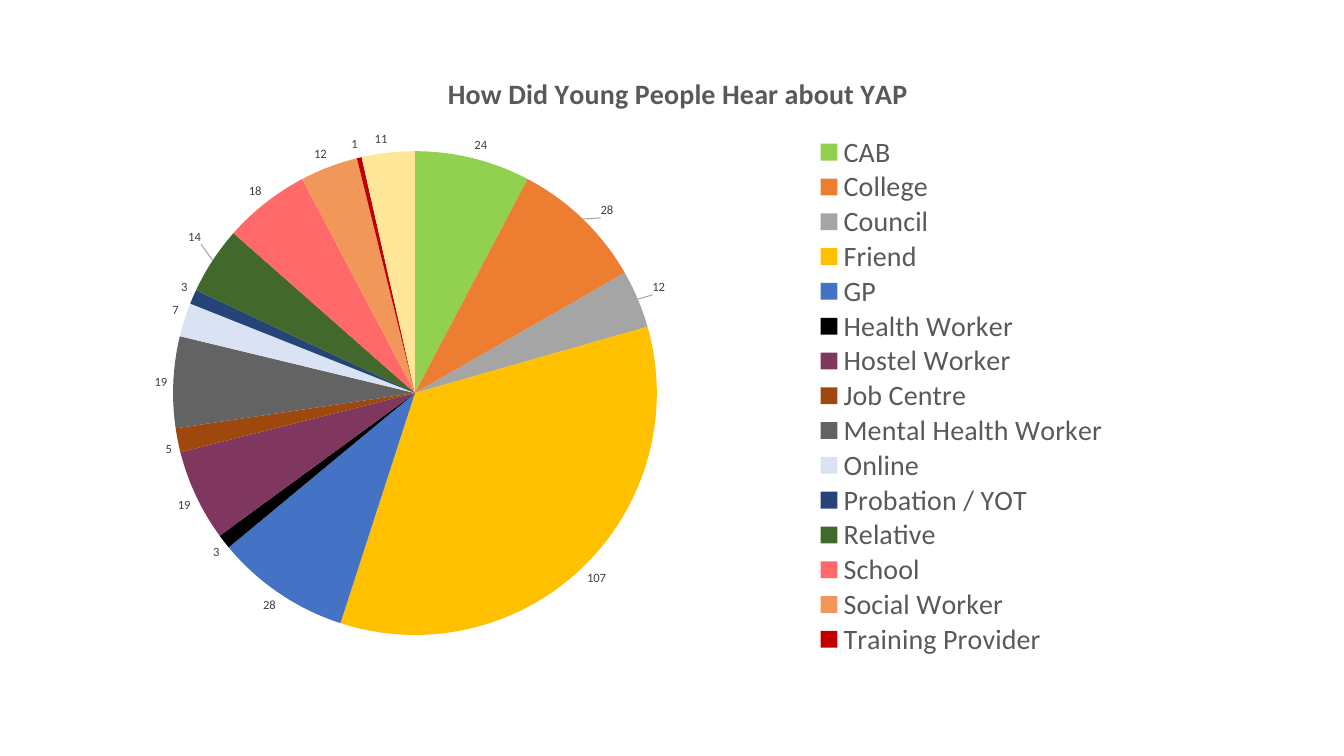
from dataclasses import dataclass

from lxml import etree
from pptx import Presentation
from pptx import util as u
from pptx.chart.data import CategoryChartData
from pptx.dml.color import RGBColor
from pptx.enum import chart as charts
from pptx.oxml.ns import qn


@dataclass(frozen=True)
class Theme:
    font: str = "Calibri"
    text: str = "595959"
    label_text: str = "404040"
    leader_line: str = "A6A6A6"
    title_size: int = 20
    legend_size: int = 20
    label_size: int = 9


# Referral source, number of young people, slice colour
SOURCES = [
    ("CAB", 24, "92D050"),
    ("College", 28, "ED7D31"),
    ("Council", 12, "A5A5A5"),
    ("Friend", 107, "FFC000"),
    ("GP", 28, "4472C4"),
    ("Health Worker", 3, "000000"),
    ("Hostel Worker", 19, "7F3760"),
    ("Job Centre", 5, "9E480E"),
    ("Mental Health Worker", 19, "636363"),
    ("Online", 7, "DAE3F3"),
    ("Probation / YOT", 3, "264478"),
    ("Relative", 14, "43682B"),
    ("School", 18, "FF6969"),
    ("Social Worker", 12, "F1975A"),
    ("Training Provider", 1, "C00000"),
    ("Other", 11, "FFE699"),
]
# Shifts of single labels, as percentages of the chart size
LABEL_SHIFTS = {"College": (1.2, 0.5), "Council": (0.8, -0.3), "Relative": (-0.6, -2)}


def add_element(parent, tag, **attributes):
    return etree.SubElement(parent, qn(tag), attributes)


def set_layout(parent, index, *, target=None, edge=True, **percentages):
    """Give a chart part a manual layout, placed at index among its children."""
    for old in parent.findall(qn("c:layout")):
        parent.remove(old)
    layout = etree.Element(qn("c:layout"))
    manual = add_element(layout, "c:manualLayout")
    if target:
        add_element(manual, "c:layoutTarget", val=target)
    if edge:
        add_element(manual, "c:xMode", val="edge")
        add_element(manual, "c:yMode", val="edge")
    for name, percentage in percentages.items():
        add_element(manual, f"c:{name}", val=f"{percentage / 100:.4f}")
    parent.insert(index, layout)


class SlideBuilder:
    def __init__(self, slide, theme):
        self.slide = slide
        self.theme = theme

    def style_font(self, font, size, color, bold=False):
        font.name = self.theme.font
        font.size = u.Pt(size)
        font.bold = bold
        font.color.rgb = RGBColor.from_string(color)

    def add_pie(self, sources, left, top, width, height):
        names, values, colors = zip(*sources)
        data = CategoryChartData()
        data.categories = names
        data.add_series("Series 1", values)
        chart = self.slide.shapes.add_chart(
            charts.XL_CHART_TYPE.PIE, left, top, width, height, data).chart
        series = chart.plots[0].series[0]
        for index, color in enumerate(colors):
            fill = series.points[index].format.fill
            fill.solid()
            fill.fore_color.rgb = RGBColor.from_string(color)
        set_layout(chart._chartSpace.chart.plotArea, 0, target="inner",
                   x=5.4, y=12.4, w=42.7, h=81.5)
        return chart

    def add_chart_title(self, chart, title):
        chart.has_title = True
        frame = chart.chart_title.text_frame
        frame.text = title
        self.style_font(frame.paragraphs[0].font, self.theme.title_size,
                        self.theme.text, bold=True)
        set_layout(chart.chart_title._element, 1, x=29.2, y=2.3)

    def add_legend(self, chart):
        chart.has_legend = True
        legend = chart.legend
        legend.position = charts.XL_LEGEND_POSITION.BOTTOM
        legend.include_in_layout = False
        self.style_font(legend.font, self.theme.legend_size, self.theme.text)
        set_layout(legend._element, 1, x=61.5, y=12.7, w=27, h=81.8)

    def add_value_labels(self, chart, names, shifts):
        series = chart.plots[0].series[0]
        labels = series.data_labels
        labels.show_value = True
        labels.position = charts.XL_LABEL_POSITION.OUTSIDE_END
        self.style_font(labels.font, self.theme.label_size, self.theme.label_text)
        leader_lines = add_element(labels._element, "c:leaderLines")
        line = add_element(add_element(leader_lines, "c:spPr"), "a:ln", w="9525")
        add_element(add_element(line, "a:solidFill"), "a:srgbClr",
                    val=self.theme.leader_line)
        for name, (x, y) in shifts.items():
            index = names.index(name)
            label = series.points[index].data_label
            label.position = charts.XL_LABEL_POSITION.OUTSIDE_END
            self.style_font(label.font, self.theme.label_size, self.theme.label_text)
            element = labels._element.xpath(f"c:dLbl[c:idx/@val='{index}']")[0]
            set_layout(element, 1, edge=False, x=x, y=y)


def main():
    presentation = Presentation()
    presentation.slide_width = u.Cm(33.87)
    presentation.slide_height = u.Cm(19.05)
    slide = presentation.slides.add_slide(presentation.slide_layouts[6])
    builder = SlideBuilder(slide, Theme())

    names = [name for name, _, _ in SOURCES]
    chart = builder.add_pie(SOURCES, u.Cm(2.82), u.Cm(1.35), u.Cm(28.55), u.Cm(16.1))
    builder.add_chart_title(chart, "How Did Young People Hear about YAP")
    builder.add_legend(chart)
    builder.add_value_labels(chart, names, LABEL_SHIFTS)

    presentation.save("out.pptx")


if __name__ == "__main__":
    main()
